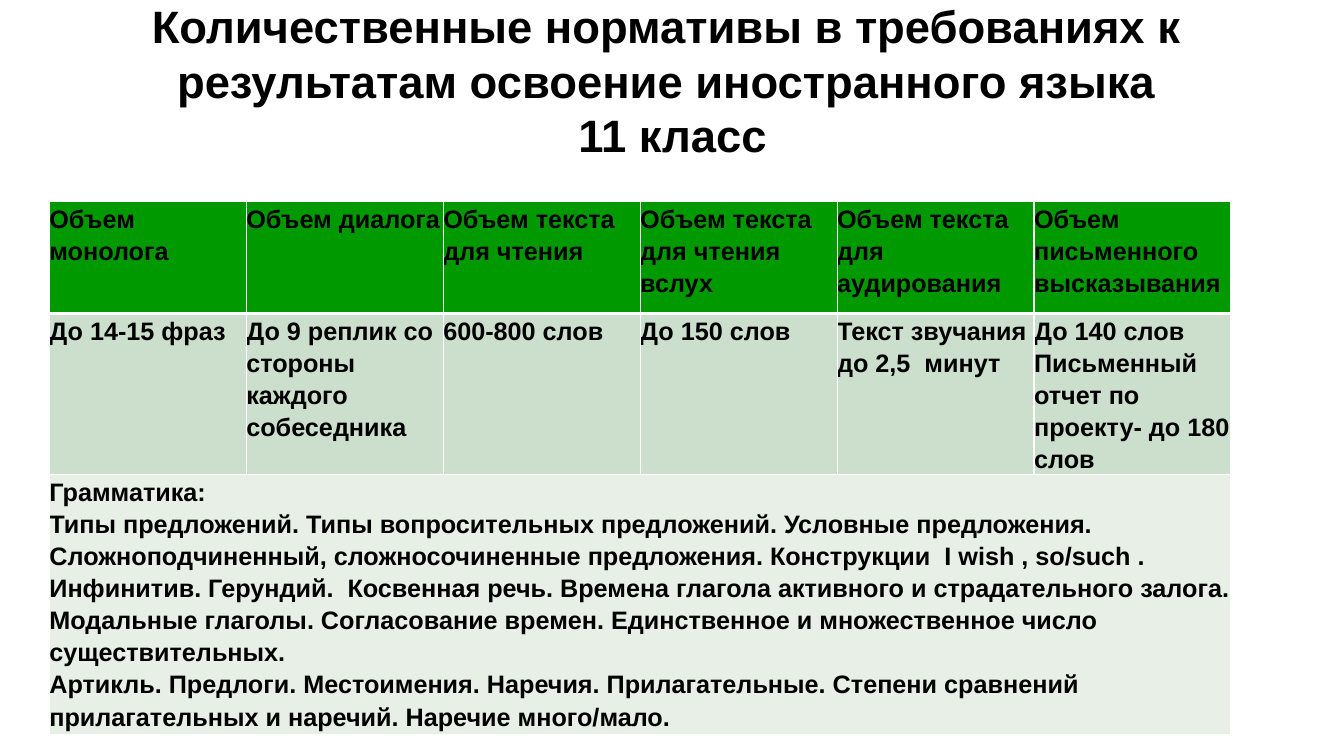
from copy import deepcopy

from pptx import Presentation
from pptx.dml.color import RGBColor
from pptx.enum.text import MSO_ANCHOR as Anchor, MSO_AUTO_SIZE as AutoSize, PP_ALIGN as Align
from pptx.oxml.ns import qn
from pptx.util import Inches, Pt
from lxml.etree import SubElement

COLOURS = {"text": "000000", "header": "009900", "values": "CCDECC",
           "grammar": "E7EFE7", "border": "FFFFFF"}
FONT = "Arial"
COLUMN_WIDTH = 11.72 / 6
ROW_HEIGHTS = [1.11, 1.48, 2.58]

TITLE = ("Количественные нормативы в требованиях к \n"
         "результатам освоение иностранного языка \n11 класс")
NORMS = [
    ("Объем монолога", ["До 14-15 фраз"]),
    ("Объем диалога", ["До 9 реплик со стороны каждого собеседника"]),
    ("Объем текста для чтения", ["600-800 слов"]),
    ("Объем текста для чтения вслух", ["До 150 слов"]),
    ("Объем текста для аудирования", ["Текст звучания до 2,5  минут"]),
    ("Объем письменного высказывания",
     ["До 140 слов", "Письменный отчет по проекту- до 180 слов"]),
]
GRAMMAR = [
    "Грамматика:",
    "Типы предложений. Типы вопросительных предложений. Условные предложения.",
    "Сложноподчиненный, сложносочиненные предложения. Конструкции  I wish , so/such .",
    "Инфинитив. Герундий.  Косвенная речь. Времена глагола активного и страдательного залога.",
    "Модальные глаголы. Согласование времен. Единственное и множественное число существительных.",
    "Артикль. Предлоги. Местоимения. Наречия. Прилагательные. Степени сравнений "
    "прилагательных и наречий. Наречие много/мало.",
]


def write_text(frame, lines, size=18, align=Align.LEFT, spacing=1.0):
    """Write bold paragraphs; a newline inside one becomes a line break."""
    for index, line in enumerate(lines):
        paragraph = frame.add_paragraph() if index else frame.paragraphs[0]
        paragraph.text = line
        paragraph.alignment = align
        paragraph.line_spacing = spacing
        for run in paragraph.runs:
            run.font.name = FONT
            run.font.size = Pt(size)
            run.font.bold = True
            run.font.color.rgb = RGBColor.from_string(COLOURS["text"])
        # Line breaks take the same character format as the runs
        for line_break in paragraph._p.findall(qn("a:br")):
            line_break.append(deepcopy(paragraph.runs[0]._r.rPr))


def add_borders(cell, top=1, bottom=1):
    properties = cell._tc.get_or_add_tcPr()
    for side, width in (("L", 1), ("R", 1), ("T", top), ("B", bottom)):
        line = SubElement(properties, qn(f"a:ln{side}"), w=str(Pt(width)))
        fill = SubElement(line, qn("a:solidFill"))
        SubElement(fill, qn("a:srgbClr"), val=COLOURS["border"])


def fill_cell(cell, lines, colour, **borders):
    cell.margin_left = cell.margin_right = cell.margin_top = cell.margin_bottom = 0
    add_borders(cell, **borders)
    cell.fill.solid()
    cell.fill.fore_color.rgb = RGBColor.from_string(COLOURS[colour])
    write_text(cell.text_frame, lines, spacing=1.14)


def place_title(slide):
    title = slide.shapes.title
    title.left, title.top = Inches(0.67), Inches(0.21)
    title.width, title.height = Inches(12), Inches(0.64)
    frame = title.text_frame
    frame.word_wrap = True
    frame.auto_size = AutoSize.NONE
    frame.vertical_anchor = Anchor.MIDDLE
    frame.margin_top = Inches(0.58)
    write_text(frame, [TITLE], size=32.4, align=Align.CENTER)


def add_norms_table(slide):
    table = slide.shapes.add_table(
        len(ROW_HEIGHTS), len(NORMS), Inches(0.49), Inches(2),
        Inches(COLUMN_WIDTH * len(NORMS)), Inches(sum(ROW_HEIGHTS))).table
    for row, height in zip(table.rows, ROW_HEIGHTS):
        row.height = Inches(height)
    # Header and values, column by column
    for column, (heading, values) in enumerate(NORMS):
        table.columns[column].width = Inches(COLUMN_WIDTH)
        fill_cell(table.cell(0, column), [heading], "header", bottom=3)
        fill_cell(table.cell(1, column), values, "values", top=3)
    # Grammar across the full width
    grammar = table.cell(2, 0)
    grammar.merge(table.cell(2, len(NORMS) - 1))
    fill_cell(grammar, GRAMMAR, "grammar")


def main():
    presentation = Presentation()
    presentation.slide_width, presentation.slide_height = Inches(13.33), Inches(7.5)
    slide = presentation.slides.add_slide(presentation.slide_layouts[5])
    place_title(slide)
    add_norms_table(slide)
    presentation.save("out.pptx")


if __name__ == "__main__":
    main()
